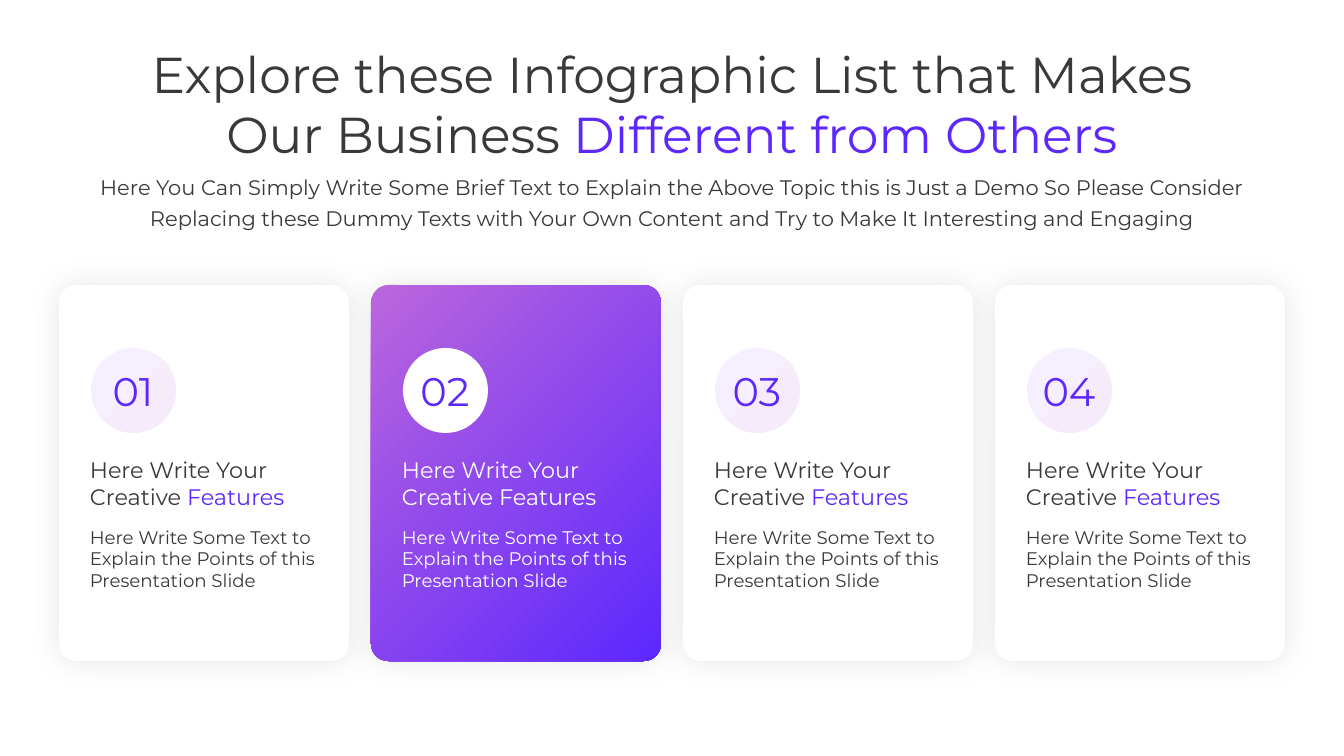
import lxml.etree
import pptx
import pptx.dml.color
import pptx.enum.shapes
import pptx.enum.text
import pptx.oxml.ns
import pptx.util

PX = 914400 / 100.8
RGBColor = pptx.dml.color.RGBColor
INK = RGBColor(0x3B, 0x38, 0x38)
WHITE = RGBColor(0xFF, 0xFF, 0xFF)
VIOLET = RGBColor(0x5D, 0x28, 0xFE)
PINK = RGBColor(0xBB, 0x66, 0xDD)
PALE_VIOLET = RGBColor(0xF6, 0xEF, 0xFF)
PALE_PINK = RGBColor(0xF6, 0xEB, 0xFB)
SHAPES = pptx.enum.shapes.MSO_SHAPE
LEFT = pptx.enum.text.PP_ALIGN.LEFT
CENTER = pptx.enum.text.PP_ALIGN.CENTER


def write(box, place, lines, size, align=LEFT, spacing=None):
    """Place a text holder and fill it with lines of (text, colour) runs."""
    box.left, box.top, box.width, box.height = [round(n * PX) for n in place]
    frame = box.text_frame
    frame.word_wrap = False
    frame.auto_size = pptx.enum.text.MSO_AUTO_SIZE.SHAPE_TO_FIT_TEXT
    frame.vertical_anchor = pptx.enum.text.MSO_ANCHOR.TOP
    for index, line in enumerate(lines):
        para = frame.add_paragraph() if index else frame.paragraphs[0]
        para.alignment = align
        para.space_before = pptx.util.Pt(0)
        if spacing:
            para.line_spacing = pptx.util.Pt(spacing)
        for text, colour in line:
            span = para.add_run()
            span.text = text
            span.font.name = "Montserrat"
            span.font.size = pptx.util.Pt(size)
            span.font.color.rgb = colour


def add_panel(kind, place, colours):
    """Add a borderless shape with one colour or a diagonal gradient of two."""
    panel = slide.shapes.add_shape(kind, *[round(n * PX) for n in place])
    panel.shadow.inherit = False
    panel.line.fill.background()
    if len(colours) == 1:
        panel.fill.solid()
        panel.fill.fore_color.rgb = colours[0]
    else:
        panel.fill.gradient()
        panel.fill.gradient_angle = 315
        for stop, colour in zip(panel.fill.gradient_stops, colours):
            stop.color.rgb = colour
    return panel


deck = pptx.Presentation()
deck.slide_width = round(1344 * PX)
deck.slide_height = round(756 * PX)
slide = deck.slides.add_slide(deck.slide_layouts[0])

write(slide.shapes.title, (95, 38, 1154, 132), [
    [("Explore these Infographic List that Makes", INK)],
    [("Our Business ", INK), ("Different from Others", VIOLET)],
], 36, CENTER)
write(slide.placeholders[1], (69, 164, 1206, 70), [
    [("Here You Can Simply Write Some Brief Text to Explain the Above Topic "
      "this is Just a Demo So Please Consider", INK)],
    [("Replacing these Dummy Texts with Your Own Content and Try to Make It "
      "Interesting and Engaging", INK)],
], 15, CENTER, 22)

for index, number in enumerate(["01", "02", "03", "04"]):
    left = 59 + 312 * index
    featured = number == "02"
    card_fill = [PINK, VIOLET] if featured else [WHITE]
    badge_fill = [WHITE] if featured else [PALE_VIOLET, PALE_PINK]
    ink = WHITE if featured else INK
    accent = WHITE if featured else VIOLET

    card = add_panel(SHAPES.ROUNDED_RECTANGLE, (left, 285, 290, 376), card_fill)
    card.adjustments[0] = 0.06
    effects = card._element.spPr.find(pptx.oxml.ns.qn("a:effectLst"))
    glow = lxml.etree.SubElement(
        effects, pptx.oxml.ns.qn("a:outerShdw"),
        blurRad=str(pptx.util.Pt(22)), dist="0", dir="0", algn="ctr", rotWithShape="0")
    black = lxml.etree.SubElement(glow, pptx.oxml.ns.qn("a:srgbClr"), val="000000")
    lxml.etree.SubElement(black, pptx.oxml.ns.qn("a:alpha"), val="10000")

    add_panel(SHAPES.OVAL, (left + 32, 348, 85, 85), badge_fill)
    write(slide.shapes.add_textbox(0, 0, 0, 0), (left + 24, 362, 100, 58),
          [[(number, VIOLET)]], 28.5, CENTER)
    write(slide.shapes.add_textbox(0, 0, 0, 0), (left + 21, 451, 234, 65), [
        [("Here Write Your", ink)],
        [("Creative ", ink), ("Features", accent)],
    ], 16)
    write(slide.shapes.add_textbox(0, 0, 0, 0), (left + 21, 521, 260, 77), [
        [("Here Write Some Text to", ink)],
        [("Explain the Points of this", ink)],
        [("Presentation Slide", ink)],
    ], 13)

deck.save("out.pptx")
